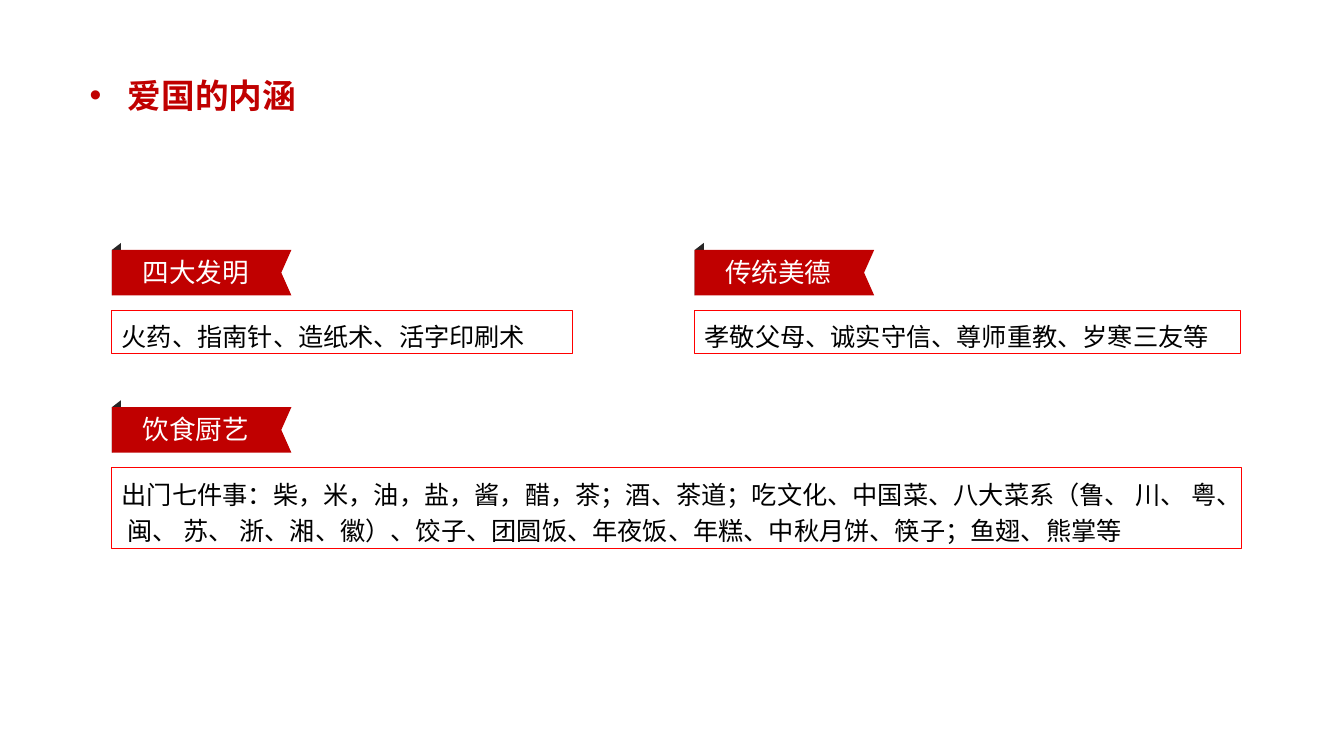
from lxml import etree
from pptx import Presentation
from pptx.dml.color import RGBColor
from pptx.enum.shapes import MSO_SHAPE
from pptx.enum.text import MSO_ANCHOR, MSO_AUTO_SIZE, PP_ALIGN
from pptx.oxml.ns import qn
from pptx.util import Inches, Pt

TITLE = "爱国的内涵"
TOPICS = [
    {"label": "四大发明", "col": 0, "row": 0, "size": (4.57, 0.43),
     "body": "火药、指南针、造纸术、活字印刷术"},
    {"label": "传统美德", "col": 1, "row": 0, "size": (5.41, 0.43),
     "body": "孝敬父母、诚实守信、尊师重教、岁寒三友等"},
    {"label": "饮食厨艺", "col": 0, "row": 1, "size": (11.2, 0.8),
     "body": "出门七件事：柴，米，油，盐，酱，醋，茶；酒、茶道；吃文化、中国菜、"
             "八大菜系（鲁、 川、 粤、 闽、 苏、 浙、湘、徽）、饺子、团圆饭、年夜饭、"
             "年糕、中秋月饼、筷子；鱼翅、熊掌等"},
]

RED = RGBColor(0xC0, 0x00, 0x00)
BORDER = RGBColor(0xFF, 0x00, 0x00)
DARK = RGBColor(0x26, 0x26, 0x26)
BLACK = RGBColor(0x00, 0x00, 0x00)
WHITE = RGBColor(0xFF, 0xFF, 0xFF)
TOP, MIDDLE = MSO_ANCHOR.TOP, MSO_ANCHOR.MIDDLE
GROW = MSO_AUTO_SIZE.SHAPE_TO_FIT_TEXT
LEFT, CENTER, JUSTIFY = PP_ALIGN.LEFT, PP_ALIGN.CENTER, PP_ALIGN.JUSTIFY
RECT = MSO_SHAPE.RECTANGLE

LEFT_EDGE, COL_STEP = 1.11, 5.78
TOP_EDGE, ROW_STEP = 2.48, 1.56
RIBBON_W, RIBBON_H, NOTCH = 1.78, 0.45, 0.1
FOLD_W, FOLD_H = 0.09, 0.07
BODY_DROP = 0.6

TITLE_FONT = {"size": Pt(24), "bold": True, "name": "Arial"}
LABEL_FONT = {"size": Pt(19), "name": "Arial"}
BODY_FONT = {"size": Pt(18), "name": "Arial"}
LABEL_FRAME = {"vertical_anchor": MIDDLE,
               "margin_left": Inches(0.07), "margin_right": Inches(0.07),
               "margin_top": Inches(0.04), "margin_bottom": Inches(0.04)}


def apply(target, values):
    for name, value in values.items():
        setattr(target, name, value)


def write(sp, text, font, color, align, frame):
    tf = sp.text_frame
    apply(tf, {"word_wrap": True, "auto_size": GROW, **frame})
    p = tf.paragraphs[0]
    p.alignment = align
    r = p.add_run()
    r.text = text
    apply(r.font, font)
    r.font.color.rgb = color
    return p


def paint(sp, color):
    sp.shadow.inherit = False
    sp.fill.solid()
    sp.fill.fore_color.rgb = color
    sp.line.fill.background()


def outline(s, points, color):
    pts = [(Inches(x), Inches(y)) for x, y in points]
    builder = s.shapes.build_freeform(*pts[0])
    builder.add_line_segments(pts[1:], close=True)
    paint(builder.convert_to_shape(), color)


def textbox(s, *box):
    return s.shapes.add_textbox(*map(Inches, box))


def add_topic(s, topic):
    x = LEFT_EDGE + topic["col"] * COL_STEP
    y = TOP_EDGE + topic["row"] * ROW_STEP
    right, bottom = x + RIBBON_W, y + RIBBON_H
    fold = x + FOLD_W

    sp = s.shapes.add_shape(RECT, *map(Inches, (x, y + BODY_DROP, *topic["size"])))
    paint(sp, WHITE)
    sp.line.color.rgb = BORDER
    sp.line.width = Pt(0.75)
    p = write(sp, topic["body"], BODY_FONT, BLACK, LEFT, {"vertical_anchor": TOP})
    p.line_spacing = Pt(26)

    outline(s, [(fold, y - FOLD_H), (x, y), (x, bottom), (fold, bottom - FOLD_H)], DARK)
    outline(s, [(right, y), (x, y), (x, bottom), (right, bottom),
                (right - NOTCH, y + RIBBON_H / 2)], RED)
    write(textbox(s, fold, y + 0.02, 1.48, 0.4),
          topic["label"], LABEL_FONT, WHITE, CENTER, LABEL_FRAME)


def add_title(s):
    p = write(textbox(s, 0.79, 0.69, 2.92, 0.5), TITLE, TITLE_FONT, RED, JUSTIFY, {})
    pPr = p._p.get_or_add_pPr()
    pPr.set("marL", str(Inches(0.38)))
    pPr.set("indent", str(-Inches(0.38)))
    etree.SubElement(pPr, qn("a:buFont")).set("typeface", "Arial")
    etree.SubElement(pPr, qn("a:buChar")).set("char", "•")


def main():
    prs = Presentation()
    prs.slide_width, prs.slide_height = Inches(13.33), Inches(7.5)
    s = prs.slides.add_slide(prs.slide_layouts[6])
    for topic in TOPICS:
        add_topic(s, topic)
    add_title(s)
    prs.save("out.pptx")


if __name__ == "__main__":
    main()
